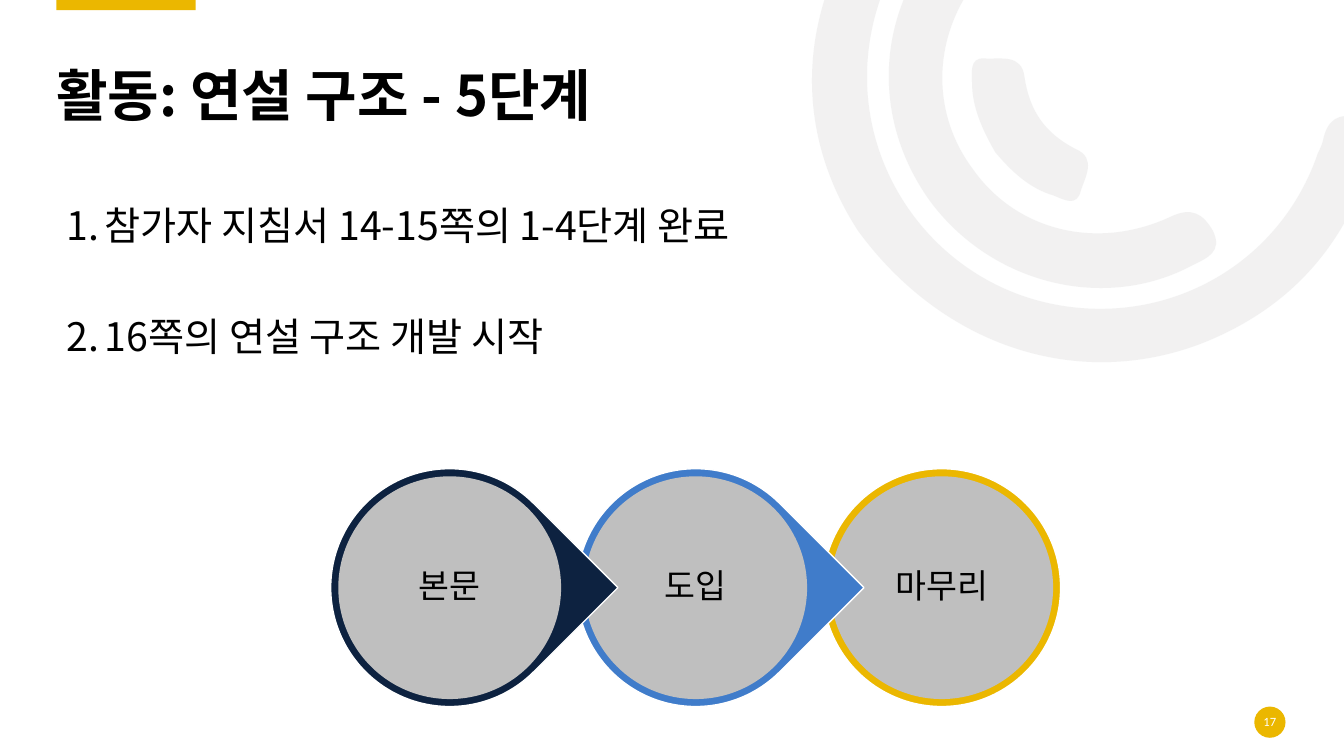
from math import cos, radians, sin
from lxml.etree import SubElement
from pptx import Presentation
from pptx.dml.color import RGBColor
from pptx.enum.shapes import MSO_SHAPE as Shape
from pptx.enum.text import MSO_ANCHOR as Anchor, MSO_AUTO_SIZE as AutoSize, PP_ALIGN as Align
from pptx.oxml.ns import qn
from pptx.util import Inches, Pt

TITLE = "활동: 연설 구조 - 5단계"
STEPS = ["참가자 지침서 14-15쪽의 1-4단계 완료", "16쪽의 연설 구조 개발 시작"]
STAGES = [("본문", "navy", Shape.TEAR), ("도입", "blue", Shape.TEAR), ("마무리", "gold", Shape.OVAL)]
PAGE = "17"
COLORS = {"gold": "EBB700", "navy": "0D2240", "blue": "407CCA", "disc": "BFBFBF",
          "arc": "E7E6E6", "white": "FFFFFF", "black": "000000"}
KOREAN, LATIN = "Noto Sans CJK KR", "Calibri"
ARC_OPACITY = 53
ARC_TURN = 144.2

ARCS = [
    ((8.13, -2.02, 4.85, 6), (8.51, 2.29), [
        (7.99, 1.49, 7.87, 0.5, 8.38, -0.5), (8.9, -1.52, 9.76, -2.03, 10.9, -2.07),
        (11.05, -2.07, 11.21, -2.1, 11.31, -1.95), (11.44, -1.75, 11.27, -1.54, 10.98, -1.54),
        (9.67, -1.54, 8.65, -0.59, 8.6, 0.68), (8.56, 1.81, 9.36, 2.81, 10.46, 3.02),
        (11.6, 3.24, 12.7, 2.61, 13.07, 1.52), (13.09, 1.48, 13.11, 1.44, 13.12, 1.4),
        (13.16, 1.19, 13.27, 1.11, 13.49, 1.17), (13.73, 1.24, 13.67, 1.41, 13.61, 1.56),
        (13.34, 2.45, 12.78, 3.07, 11.91, 3.41), (10.7, 3.87, 9.36, 3.45, 8.51, 2.29)]),
    ((9.01, -0.78, 2.13, 4.26), (9.22, 1.99), [
        (8.62, 1.15, 8.69, 0.07, 9.4, -0.68), (9.51, -0.79, 9.62, -0.95, 9.8, -0.78),
        (9.95, -0.64, 9.97, -0.5, 9.79, -0.32), (9.25, 0.26, 9.2, 1.08, 9.65, 1.68),
        (10.08, 2.29, 10.88, 2.49, 11.61, 2.15), (11.82, 2.05, 11.93, 2.12, 12.03, 2.29),
        (12.13, 2.5, 11.97, 2.56, 11.83, 2.63), (10.96, 3.1, 9.83, 2.82, 9.22, 1.99)]),
    ((9.8, 0.37, 0.78, 1.83), (9.87, 1.51), [
        (9.75, 1.3, 9.64, 1.07, 9.64, 0.82), (9.64, 0.73, 9.61, 0.57, 9.76, 0.58),
        (9.92, 0.59, 10.13, 0.53, 10.16, 0.76), (10.21, 1.1, 10.36, 1.32, 10.67, 1.48),
        (10.88, 1.57, 10.76, 1.76, 10.72, 1.89), (10.68, 2.06, 10.55, 1.98, 10.45, 1.94),
        (10.21, 1.87, 10.03, 1.7, 9.87, 1.51)]),
]


def rgb(color):
    return RGBColor.from_string(COLORS[color])


def paint(shape, color, outline=None):
    shape.shadow.inherit = False
    shape.fill.solid()
    shape.fill.fore_color.rgb = rgb(color)
    if outline:
        shape.line.color.rgb = rgb(outline)
        shape.line.width = Pt(1)
    else:
        shape.line.fill.background()


def place(shape, left, top, width, height):
    shape.left, shape.top = Inches(left), Inches(top)
    shape.width, shape.height = Inches(width), Inches(height)


def add_painted(slide, kind, left, top, width, height, color, outline=None):
    shape = slide.shapes.add_shape(kind, Inches(left), Inches(top), Inches(width), Inches(height))
    paint(shape, color, outline)
    return shape


def turn_back(x, y, box):
    left, top, width, height = box
    dx, dy = x - left - width / 2, y - top - height / 2
    c, s = cos(radians(ARC_TURN)), sin(radians(ARC_TURN))
    return Inches(width / 2 + dx * c + dy * s), Inches(height / 2 - dx * s + dy * c)


def add_arc(slide, box, start, curves):
    origin = turn_back(*start, box)
    triples = [[turn_back(*curve[i:i + 2], box) for i in (0, 2, 4)] for curve in curves]
    builder = slide.shapes.build_freeform(*origin, scale=1.0)
    builder.add_line_segments([triple[-1] for triple in triples], close=True)
    arc = builder.convert_to_shape()
    place(arc, *box)
    arc.rotation = ARC_TURN
    outline = next(arc._element.iter(qn("a:path")))
    outline.set("w", str(arc.width))
    outline.set("h", str(arc.height))
    for child in list(outline):
        outline.remove(child)
    for tag, points in [("a:moveTo", [origin])] + [("a:cubicBezTo", triple) for triple in triples]:
        segment = SubElement(outline, qn(tag))
        for x, y in points:
            SubElement(segment, qn("a:pt"), x=str(x), y=str(y))
    SubElement(outline, qn("a:close"))
    paint(arc, "arc")
    fill_color = next(arc._element.spPr.iter(qn("a:srgbClr")))
    SubElement(fill_color, qn("a:alpha"), val=str(ARC_OPACITY * 1000))


def write(paragraph, text, size, color="black", font=KOREAN, bold=False, align=Align.LEFT):
    paragraph.alignment = align
    paragraph.line_spacing = 0.9
    run = paragraph.add_run()
    run.text = text
    run.font.size = Pt(size)
    run.font.bold = bold
    run.font.name = font
    run.font.color.rgb = rgb(color)
    SubElement(run.font._element, qn("a:ea"), typeface=font)


def set_frame(shape, anchor, inset):
    frame = shape.text_frame
    frame.word_wrap = True
    frame.auto_size = AutoSize.NONE
    frame.vertical_anchor = anchor
    frame.margin_left = frame.margin_right = Inches(inset)
    frame.margin_top = frame.margin_bottom = Inches(inset)
    return frame


def add_title(slide):
    title = slide.shapes.title
    place(title, 0.56, 0.27, 12.19, 1.01)
    write(set_frame(title, Anchor.BOTTOM, 0).paragraphs[0], TITLE, 40, bold=True)


def add_steps(slide):
    body = slide.placeholders[1]
    place(body, 0.56, 2, 11.85, 2.46)
    frame = set_frame(body, Anchor.TOP, 0.05)
    frame.margin_left = frame.margin_right = Inches(0.1)
    for index, step in enumerate(STEPS):
        paragraph = frame.add_paragraph() if index else frame.paragraphs[0]
        properties = paragraph._p.get_or_add_pPr()
        properties.set("marL", str(Inches(0.38)))
        properties.set("indent", str(-Inches(0.38)))
        SubElement(properties, qn("a:buFont"), typeface="+mj-lt")
        SubElement(properties, qn("a:buAutoNum"), type="arabicPeriod")
        paragraph.space_before = Pt(49 if index else 0)
        write(paragraph, step, 28)


def add_stages(slide):
    left, top, pitch, ring, disc = 3.28, 4.65, 2.44, 2.36, 2.21
    inset = (ring - disc) / 2
    for index, (label, color, kind) in reversed(list(enumerate(STAGES))):
        x = left + index * pitch
        outer = add_painted(slide, kind, x, top, ring, ring, color, "white")
        if kind == Shape.TEAR:
            outer.rotation = 45
        inner = add_painted(slide, Shape.OVAL, x + inset, top + inset, disc, disc, "disc")
        write(set_frame(inner, Anchor.MIDDLE, 0.03).paragraphs[0], label, 24, align=Align.CENTER)


def main():
    deck = Presentation()
    deck.slide_width, deck.slide_height = Inches(13.33), Inches(7.5)
    slide = deck.slides.add_slide(deck.slide_layouts[1])
    for box, start, curves in ARCS:
        add_arc(slide, box, start, curves)
    add_painted(slide, Shape.RECTANGLE, 0.56, -0.02, 1.38, 0.12, "gold")
    badge = add_painted(slide, Shape.OVAL, 12.44, 7.01, 0.31, 0.31, "gold")
    write(set_frame(badge, Anchor.MIDDLE, 0).paragraphs[0], PAGE, 9, "white", LATIN, align=Align.CENTER)
    add_title(slide)
    add_steps(slide)
    add_stages(slide)
    deck.save("out.pptx")


if __name__ == "__main__":
    main()
